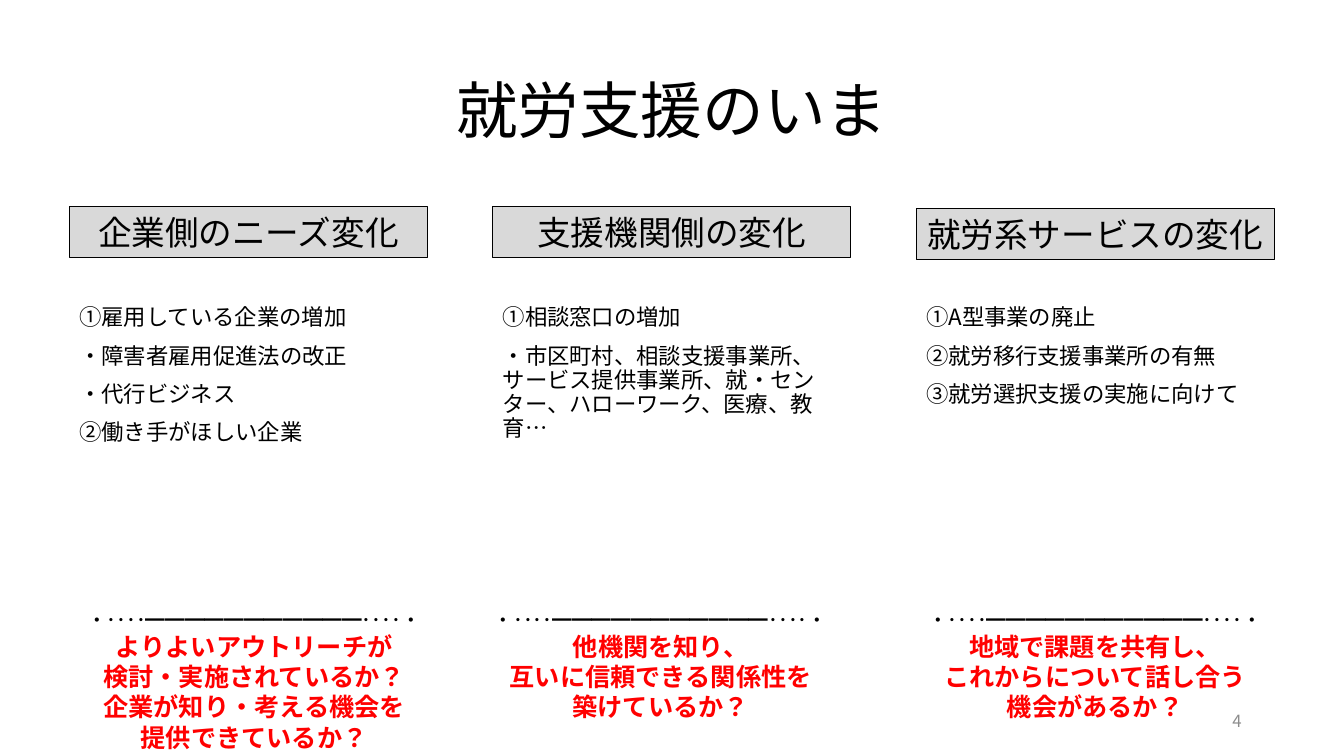
from lxml import etree
from pptx import Presentation
from pptx import util as u
from pptx.dml.color import RGBColor
from pptx.enum import lang, shapes, text
from pptx.oxml.ns import qn

FONT = "Noto Sans CJK JP"
BLACK, RED, GREY, PALE = "000000", "FF0000", "8C8C8C", "D9D9D9"
LEFT, CENTER, RIGHT = text.PP_ALIGN.LEFT, text.PP_ALIGN.CENTER, text.PP_ALIGN.RIGHT
TOP, MIDDLE = text.MSO_ANCHOR.TOP, text.MSO_ANCHOR.MIDDLE

TITLE = "就労支援のいま"
PAGE_NUMBER = "4"
DIVIDER = "・････━━━━━━━━━━━････・"
COLUMNS = [
    {
        "heading": "企業側のニーズ変化",
        "points": ["①雇用している企業の増加", "・障害者雇用促進法の改正",
                   "・代行ビジネス", "②働き手がほしい企業"],
        "question": ["よりよいアウトリーチが", "検討・実施されているか？",
                     "企業が知り・考える機会を", "提供できているか？"],
        "heading_top": 5.21, "points_height": 7.87,
        "question_box": (1.63, 15.19, 9.55, 3.94),
    },
    {
        "heading": "支援機関側の変化",
        "points": ["①相談窓口の増加",
                   "・市区町村、相談支援事業所、サービス提供事業所、就・センター、"
                   "ハローワーク、医療、教育…"],
        "question": ["他機関を知り、", "互いに信頼できる関係性を", "築けているか？"],
        "heading_top": 5.21, "points_height": 7.32,
        "question_box": (12.14, 15.19, 9.02, 3.18),
    },
    {
        "heading": "就労系サービスの変化",
        "points": ["①A型事業の廃止", "②就労移行支援事業所の有無",
                   "③就労選択支援の実施に向けて"],
        "question": ["地域で課題を共有し、", "これからについて話し合う", "機会があるか？"],
        "heading_top": 5.26, "points_height": 8.28,
        "question_box": (23.09, 15.19, 9.02, 3.18),
    },
]
COLUMN_LEFT, COLUMN_PITCH, COLUMN_WIDTH = 1.75, 10.67, 9.02
HEADING_HEIGHT, POINTS_TOP = 1.28, 7.6


def color(hex_string):
    return RGBColor.from_string(hex_string)


def lengths(box):
    return [u.Cm(value) for value in box]


def prepare_frame(shape, anchor=TOP):
    frame = shape.text_frame
    frame.word_wrap = True
    frame.auto_size = text.MSO_AUTO_SIZE.NONE
    frame.vertical_anchor = anchor
    return frame


def write_lines(frame, lines, size, ink=BLACK, bold=False, align=CENTER,
                spacing=1.0, before=0):
    """Add one paragraph per line, using the empty first paragraph if there is one."""
    for line in lines:
        first = frame.paragraphs[0]
        paragraph = frame.add_paragraph() if first.runs else first
        paragraph.alignment = align
        paragraph.line_spacing = spacing
        paragraph.space_before = u.Pt(before)
        run = paragraph.add_run()
        run.text = line
        font = run.font
        font.size, font.bold, font.name = u.Pt(size), bold, FONT
        font.language_id = lang.MSO_LANGUAGE_ID.JAPANESE
        font.color.rgb = color(ink)
        latin = run._r.rPr.find(qn("a:latin"))
        east_asian = etree.Element(qn("a:ea"), typeface=FONT)
        latin.addnext(east_asian)


def add_text(slide, box, anchor=TOP):
    return prepare_frame(slide.shapes.add_textbox(*lengths(box)), anchor)


def add_heading(slide, box, heading):
    shape = slide.shapes.add_shape(shapes.MSO_SHAPE.RECTANGLE, *lengths(box))
    shape.shadow.inherit = False
    shape.fill.solid()
    shape.fill.fore_color.rgb = color(PALE)
    shape.line.color.rgb = color(BLACK)
    shape.line.width = u.Pt(0.75)
    write_lines(prepare_frame(shape), [heading], 24)


def add_column(slide, index, column):
    left = COLUMN_LEFT + index * COLUMN_PITCH
    add_heading(slide, (left, column["heading_top"], COLUMN_WIDTH, HEADING_HEIGHT),
                column["heading"])
    points = add_text(slide, (left, POINTS_TOP, COLUMN_WIDTH, column["points_height"]))
    write_lines(points, column["points"], 16, align=LEFT, spacing=0.9, before=10)
    question = add_text(slide, column["question_box"])
    write_lines(question, [DIVIDER], 14)
    write_lines(question, column["question"], 18, ink=RED, bold=True)


def main():
    presentation = Presentation()
    presentation.slide_width, presentation.slide_height = u.Cm(33.87), u.Cm(19.05)
    slide = presentation.slides.add_slide(presentation.slide_layouts[5])

    title = slide.shapes.title
    title.left, title.top, title.width, title.height = lengths((2.33, 1.01, 29.21, 3.68))
    write_lines(prepare_frame(title, MIDDLE), [TITLE], 44, spacing=0.9)

    for index, column in enumerate(COLUMNS):
        add_column(slide, index, column)

    number = add_text(slide, (23.92, 17.66, 7.62, 1.01), MIDDLE)
    write_lines(number, [PAGE_NUMBER], 12, ink=GREY, align=RIGHT)
    presentation.save("out.pptx")


if __name__ == "__main__":
    main()
